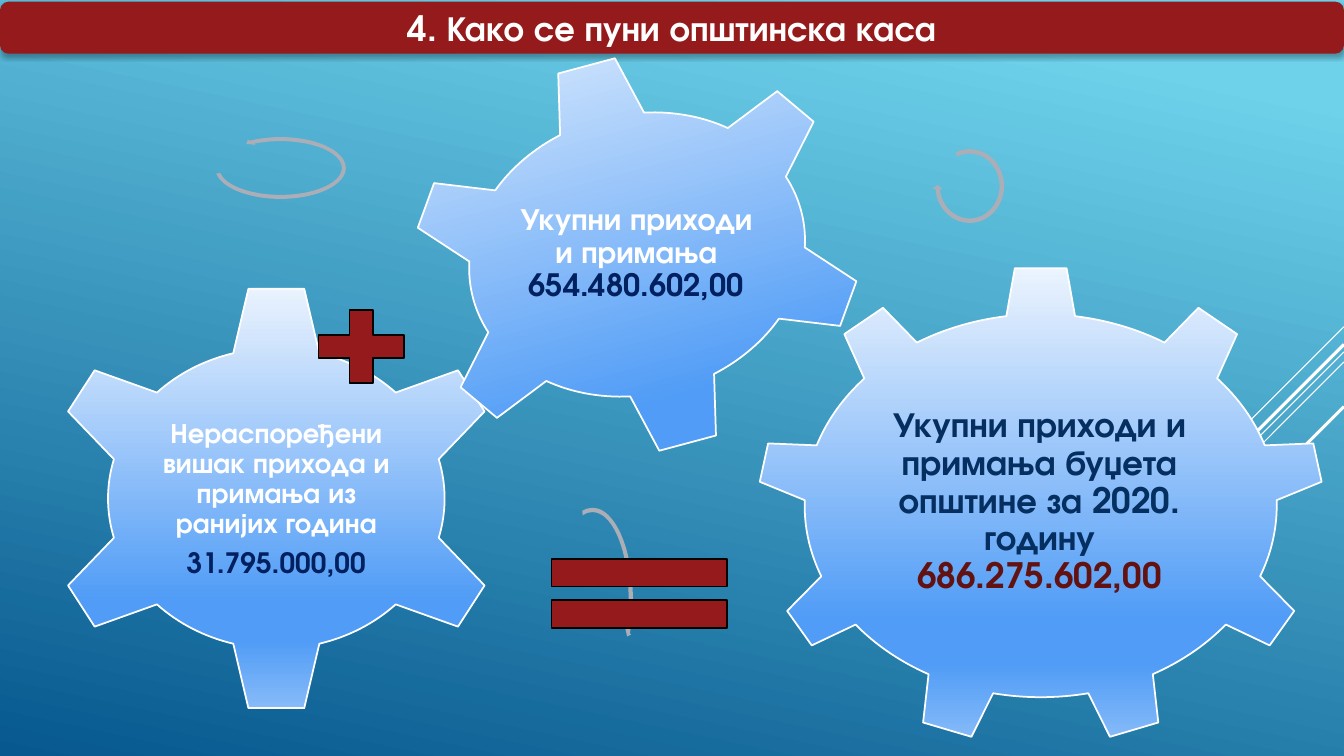
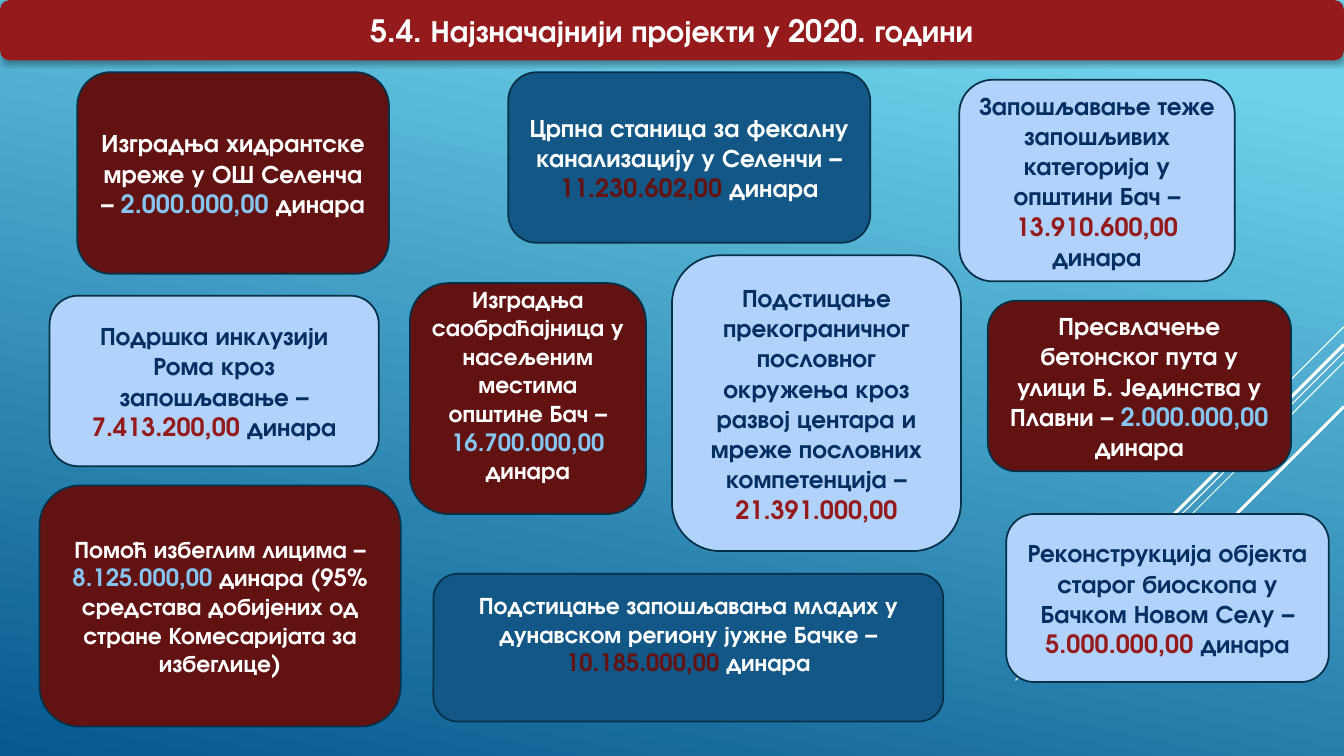
from copy import deepcopy

from lxml import etree
from pptx import Presentation
from pptx.dml.color import RGBColor
from pptx.enum import shapes, text
from pptx.oxml import ns
from pptx.util import Inches, Pt

# Grid: 160 columns by 90 rows of square cells
COLUMNS, ROWS = 160, 90
WIDTH, HEIGHT = Inches(13.333), Inches(7.5)

# Shared look
FONT = "TeX Gyre Adventor"
WHITE = RGBColor(0xFF, 0xFF, 0xFF)
BLACK = RGBColor(0x00, 0x00, 0x00)
RED = RGBColor(0x94, 0x1A, 0x1B)
MAROON = RGBColor(0x63, 0x12, 0x12)
NAVY = RGBColor(0x05, 0x2F, 0x61)
DEEP_BLUE = RGBColor(0x00, 0x20, 0x60)
STEEL = RGBColor(0x12, 0x57, 0x85)
PALE = RGBColor(0xB1, 0xD3, 0xFB)
SKY = RGBColor(0x86, 0xC5, 0xEF)
OUTLINE = RGBColor(0x04, 0x31, 0x48)
GREY = RGBColor(0xAB, 0xAD, 0xB7)
BACKGROUND = [(0.1, RGBColor(0x6E, 0xD2, 0xEB)), (1, RGBColor(0x06, 0x58, 0x8E))]
GEAR_FILL = [(0, RGBColor(0xEC, 0xF4, 0xFE)), (0.74, RGBColor(0x50, 0x9C, 0xF6)),
             (0.83, RGBColor(0x50, 0x9C, 0xF6)), (1, RGBColor(0x8B, 0xBD, 0xF9))]

# Diagonal rays from the right edge: start row, length in cells, line width
RAYS = [(38.9, 12, 0.75), (41.9, 39.1, 0.75), (43.1, 24.9, 0.75),
        (41, 22.9, 2.25), (48.4, 16.7, 2.25)]

KIND = shapes.MSO_SHAPE

# Gears: kind, cell, rotation, text cell, text size, paragraphs of (words, colour)
GEARS = [
    (KIND.GEAR_9, (90.1, 31.7, 67.6, 57), 0, (102.8, 45.1, 41.9, 29.3), 25,
     [[("Укупни приходи и примања буџета општине за 2020. годину ", NAVY),
       ("686.275.602,00", MAROON)]]),
    (KIND.GEAR_6, (5.2, 33.8, 55.4, 51.1), 0, (18.7, 46.8, 28.4, 25.2), 20,
     [[("Нераспоређени вишак прихода и примања из ранијих година", WHITE)],
      [("31.795.000,00", DEEP_BLUE)]]),
    (KIND.GEAR_6, (48.5, 6.5, 54.7, 47.6), 345, (60.8, 16.4, 29.9, 27.6), 22,
     [[("Укупни приходи и примања ", WHITE), ("654.480.602,00", DEEP_BLUE)]]),
]

# Turning arrows: kind, cell, adjustments
ARROWS = [
    (KIND.CIRCULAR_ARROW, (65.5, 60.2, 10.1, 22.2),
     (0.05, 2.99, 25.46, 157.98, 0.05)),
    (KIND.CIRCULAR_ARROW, (111, 17.4, 8.9, 9.5),
     (0.06, 4.3, 104.89, 148.38, 0.07)),
    (KIND.LEFT_CIRCULAR_ARROW, (25.3, 16, 16.2, 8),
     (0.06, 3.94, 133.14, 105.08, 0.07)),
]

SIGNS = [(KIND.MATH_PLUS, (36.1, 35.3, 13.8, 11.9)),
         (KIND.MATH_EQUAL, (61.9, 63.7, 28.4, 13.9))]

# Project card styles: fill, words, amount
DARK = (MAROON, WHITE, SKY)
LIGHT = (PALE, NAVY, RED)
BLUE = (STEEL, WHITE, MAROON)

# Project cards: cell, style, text size, bottom inset, words, amount, ending
PROJECTS = [
    ((9.2, 8.6, 37.1, 24), DARK, 18, 0.05,
     "Изградња хидрантске мреже у ОШ Селенча – ", "2.000.000,00", " динара"),
    ((80, 30.4, 34.4, 35.2), LIGHT, 18, 0.05,
     "Подстицање прекограничног пословног окружења кроз развој центара "
     "и мреже пословних компетенција – ", "21.391.000,00", ""),
    ((4.7, 57.8, 43, 28.7), DARK, 17, 0.05,
     "Помоћ избеглим лицима – ", "8.125.000,00",
     " динара (95% средстава добијених од стране Комесаријата за избеглице)"),
    ((114.2, 9.5, 32.8, 24), LIGHT, 18, 0.05,
     "Запошљавање теже запошљивих категорија у општини Бач – ",
     "13.910.600,00", " динара"),
    ((60.5, 8.6, 43.1, 20.3), BLUE, 18, 0.05,
     "Црпна станица за фекалну канализацију у Селенчи – ",
     "11.230.602,00", " динара"),
    ((5.9, 35.2, 39.2, 20.3), LIGHT, 18, 0.05,
     "Подршка инклузији Рома кроз запошљавање – ", "7.413.200,00", " динара"),
    ((117.6, 35.8, 36.1, 20.3), DARK, 18, 0.05,
     "Пресвлачење бетонског пута у улици Б. Јединства у Плавни – ",
     "2.000.000,00", " динара"),
    ((48.8, 33.7, 28.1, 27.5), DARK, 17, 0.33,
     "Изградња саобраћајница у насељеним местима општине Бач – ",
     "16.700.000,00", " динара"),
    ((119.8, 61.2, 38.4, 20), LIGHT, 18, 0.05,
     "Реконструкција објекта старог биоскопа у Бачком Новом Селу – ",
     "5.000.000,00", " динара"),
    ((51.6, 68.3, 60.7, 17.6), BLUE, 17, 0.33,
     "Подстицање запошљавања младих у дунавском региону јужне Бачке – ",
     "10.185.000,00", " динара"),
]


def across(columns):
    return round(WIDTH * columns / COLUMNS)


def down(rows):
    return round(HEIGHT * rows / ROWS)


def place(cell):
    left, top, width, height = cell
    return across(left), down(top), across(width), down(height)


def set_all(target, values):
    for name, value in values.items():
        setattr(target, name, value)


def paint_gradient(fill, element, stops, angle):
    fill.gradient()
    fill.gradient_angle = angle
    stop_list = next(element.iter(ns.qn("a:gsLst")))
    while len(stop_list) < len(stops):
        stop_list.append(deepcopy(stop_list[0]))
    for stop, (position, colour) in zip(fill.gradient_stops, stops):
        stop.position = position
        stop.color.rgb = colour


def add_figure(page, kind, cell, fill=None, line=None):
    figure = page.shapes.add_shape(kind, *place(cell))
    figure.shadow.inherit = False
    if fill is not None:
        figure.fill.solid()
        figure.fill.fore_color.rgb = fill
    if line is None:
        figure.line.fill.background()
    else:
        figure.line.color.rgb = line
        figure.line.width = Pt(1.25)
    return figure


def write(box, paragraphs, size, frame_format=None, para_format=None):
    frame = box.text_frame
    set_all(frame, {"word_wrap": True, "vertical_anchor": text.MSO_ANCHOR.MIDDLE,
                    **(frame_format or {})})
    for index, spans in enumerate(paragraphs):
        para = frame.add_paragraph() if index else frame.paragraphs[0]
        set_all(para, {"alignment": text.PP_ALIGN.CENTER, **(para_format or {})})
        for words, colour in spans:
            span = para.add_run()
            span.text = words
            set_all(span.font, {"name": FONT, "size": Pt(size), "bold": True})
            span.font.color.rgb = colour


def add_ray(page, row, length, width):
    ray = page.shapes.add_connector(
        shapes.MSO_CONNECTOR.STRAIGHT, across(COLUMNS), down(row),
        across(COLUMNS - length), down(row + length))
    ray.line.color.rgb = WHITE
    ray.line.width = Pt(width)
    etree.SubElement(ray._element.spPr, ns.qn("a:effectLst"))


def add_title_bar(page, title, size, top, height):
    bar = add_figure(page, KIND.ROUNDED_RECTANGLE, (0, top, COLUMNS, height), RED)
    effects = bar._element.spPr.find(ns.qn("a:effectLst"))
    shadow = etree.SubElement(
        effects, ns.qn("a:outerShdw"), blurRad=str(Pt(3.5)), dist=str(Pt(2.2)),
        dir="5400000", rotWithShape="0")
    colour = etree.SubElement(shadow, ns.qn("a:srgbClr"), val=str(BLACK))
    etree.SubElement(colour, ns.qn("a:alpha"), val="32000")
    write(bar, [[(title, WHITE)]], size)


def add_page(deck, title, size, top, height):
    page = deck.slides.add_slide(deck.slide_layouts[6])
    paint_gradient(page.background.fill, page._element, BACKGROUND, 258)
    for ray in RAYS:
        add_ray(page, *ray)
    add_title_bar(page, title, size, top, height)
    return page


def add_gear(page, kind, cell, rotation, text_cell, size, paragraphs):
    gear = add_figure(page, kind, cell, line=WHITE)
    gear.rotation = rotation
    paint_gradient(gear.fill, gear._element, GEAR_FILL, 270)
    label = page.shapes.add_textbox(*place(text_cell))
    sides = ("left", "top", "right", "bottom")
    write(label, paragraphs, size,
          {f"margin_{side}": Inches(0.03) for side in sides},
          {"line_spacing": 0.9, "space_after": Pt(6.5)})


def add_arrow(page, kind, cell, adjustments):
    arrow = add_figure(page, kind, cell, GREY)
    for index, value in enumerate(adjustments):
        arrow.adjustments[index] = value


def add_project(page, cell, style, size, bottom, words, amount, ending):
    fill, word_colour, amount_colour = style
    card = add_figure(page, KIND.ROUNDED_RECTANGLE, cell, fill, OUTLINE)
    spans = [(words, word_colour), (amount, amount_colour)]
    if ending:
        spans.append((ending, word_colour))
    write(card, [spans], size, {"margin_bottom": Inches(bottom)})


def main():
    deck = Presentation()
    set_all(deck, {"slide_width": WIDTH, "slide_height": HEIGHT})

    # Municipal income
    page = add_page(deck, "4. Како се пуни општинска каса", 25, 0.2, 6.2)
    for gear in GEARS:
        add_gear(page, *gear)
    for arrow in ARROWS:
        add_arrow(page, *arrow)
    for kind, cell in SIGNS:
        add_figure(page, kind, cell, RED, BLACK)

    # Main projects
    page = add_page(deck, "5.4. Најзначајнији пројекти у 2020. години", 22, 0, 7.2)
    for project in PROJECTS:
        add_project(page, *project)

    deck.save("out.pptx")


if __name__ == "__main__":
    main()
